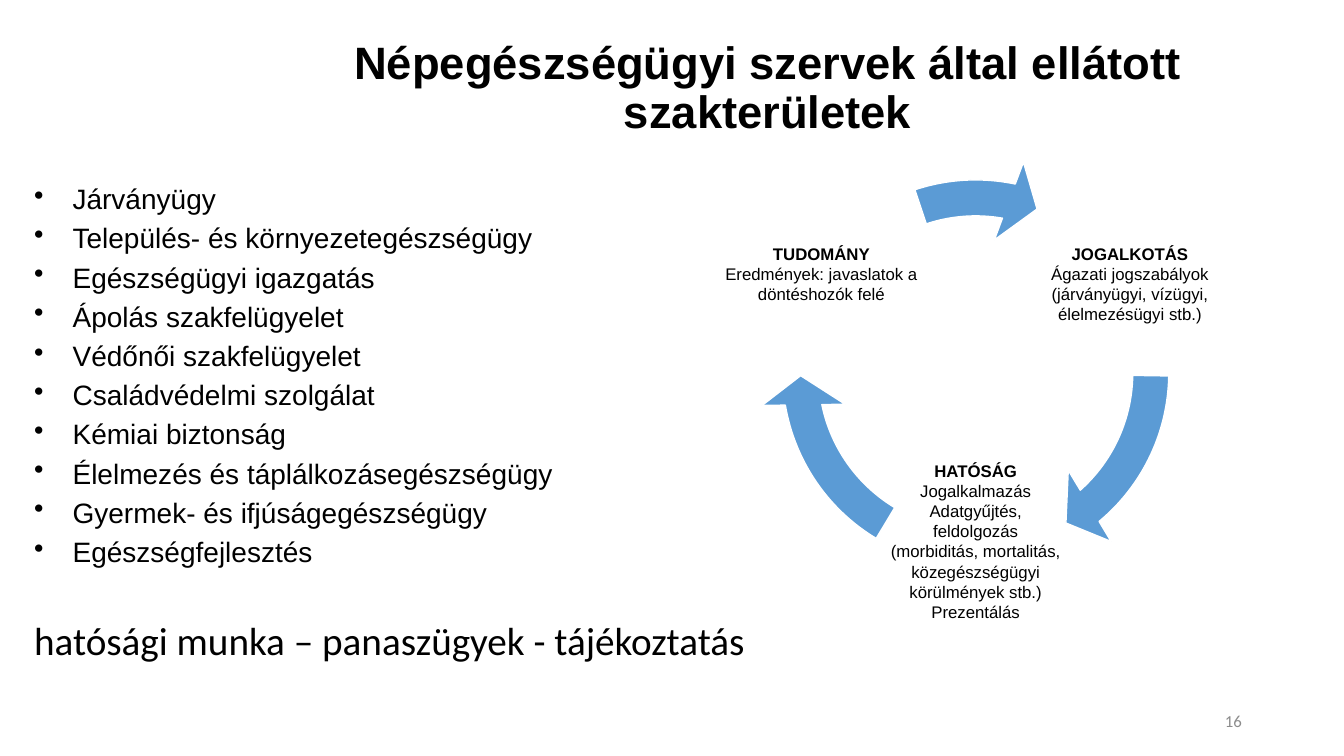
import math

import pptx
import pptx.dml.color
import pptx.enum.shapes
import pptx.enum.text
import pptx.oxml.ns
import pptx.util
from lxml import etree

Cm = pptx.util.Cm
Pt = pptx.util.Pt
ALIGN = pptx.enum.text.PP_ALIGN
ANCHOR = pptx.enum.text.MSO_ANCHOR

BLACK = "000000"
GREY = "8C8C8C"
BLUE = "5B9BD5"
WHITE = "FFFFFF"

FIELDS = [
    "Járványügy",
    "Település- és környezetegészségügy",
    "Egészségügyi igazgatás",
    "Ápolás szakfelügyelet",
    "Védőnői szakfelügyelet",
    "Családvédelmi szolgálat",
    "Kémiai biztonság",
    "Élelmezés és táplálkozásegészségügy",
    "Gyermek- és ifjúságegészségügy",
    "Egészségfejlesztés",
]

# Angle on the ring, width, bottom inset, lines, arrow head and tail adjustments
STAGES = [
    (-30, 4.62, 0.05,
     ["JOGALKOTÁS", "Ágazati jogszabályok", "(járványügyi, vízügyi,",
      "élelmezésügyi stb.)"],
     (29.621, 0.529)),
    (90, 4.62, 0.56,
     ["HATÓSÁG", "Jogalkalmazás", "Adatgyűjtés, feldolgozás",
      "(morbiditás, mortalitás,", "közegészségügyi körülmények stb.)",
      "Prezentálás"],
     (101.706, 72.614)),
    (210, 4.95, 0.56,
     ["TUDOMÁNY", "Eredmények: javaslatok a döntéshozók felé"],
     (168.551, 150.984)),
]


def rgb(value):
    return pptx.dml.color.RGBColor.from_string(value)


def add_frame(slide, left, top, width, height, anchor, insets):
    """Add a wrapping text box (cm); insets are left, top, right, bottom."""
    box = slide.shapes.add_textbox(Cm(left), Cm(top), Cm(width), Cm(height))
    frame = box.text_frame
    frame.word_wrap = True
    frame.vertical_anchor = anchor
    (frame.margin_left, frame.margin_top,
     frame.margin_right, frame.margin_bottom) = map(Cm, insets)
    return frame


def add_line(frame, index, text, size, font="Arial", color=BLACK,
             bold=False, align=ALIGN.LEFT):
    """Write one paragraph with one run; index 0 uses the existing paragraph."""
    paragraph = frame.add_paragraph() if index else frame.paragraphs[0]
    paragraph.alignment = align
    run = paragraph.add_run()
    run.text = text
    run.font.size = Pt(size)
    run.font.name = font
    run.font.bold = bold
    run.font.color.rgb = rgb(color)
    return paragraph


def add_bullet(paragraph, indent):
    properties = paragraph._p.get_or_add_pPr()
    properties.set("marL", str(Cm(indent)))
    properties.set("indent", str(-Cm(indent)))
    bullet = etree.SubElement(properties, pptx.oxml.ns.qn("a:buChar"))
    bullet.set("char", "•")


def draw_title(slide, left, top, width, height):
    frame = add_frame(slide, left, top, width, height, ANCHOR.MIDDLE,
                      (0.25, 1.35, 0.25, 0.1))
    title = add_line(frame, 0, "Népegészségügyi szervek által ellátott szakterületek",
                     32.4, bold=True, align=ALIGN.CENTER)
    title.line_spacing = 0.9


def draw_fields(slide, left, top, width, height):
    frame = add_frame(slide, left, top, width, height, ANCHOR.TOP,
                      (0.25, 1.15, 0.25, 0.13))
    for index, field in enumerate(FIELDS):
        entry = add_line(frame, index, field, 20)
        add_bullet(entry, 0.97)
        if index:
            entry.space_before = Pt(4)
    summary = add_line(frame, len(FIELDS),
                       "hatósági munka – panaszügyek - tájékoztatás",
                       28, font="Calibri")
    summary.line_spacing = 0.9
    summary.space_before = Pt(38)


def draw_cycle(slide, left, top, side):
    """Set the stages on a ring, each followed by an arrow."""
    stage_height = 4.62
    radius = 4.49
    for angle, stage_width, bottom, lines, (head, tail) in STAGES:
        center_x = left + side / 2 + radius * math.cos(math.radians(angle))
        center_y = top + side / 2 + radius * math.sin(math.radians(angle))
        frame = add_frame(slide, center_x - stage_width / 2,
                          center_y - stage_height / 2, stage_width, stage_height,
                          ANCHOR.MIDDLE, (0.05, 0.05, 0.05, bottom))
        for index, line in enumerate(lines):
            add_line(frame, index, line, 12, bold=index == 0, align=ALIGN.CENTER)

        arrow = slide.shapes.add_shape(
            pptx.enum.shapes.MSO_SHAPE.CIRCULAR_ARROW,
            Cm(left), Cm(top), Cm(side), Cm(side))
        for index, value in enumerate((0.083, 5.765, head, tail, 0.096)):
            arrow.adjustments[index] = value
        arrow.shadow.inherit = False
        arrow.fill.solid()
        arrow.fill.fore_color.rgb = rgb(BLUE)
        arrow.line.color.rgb = rgb(WHITE)
        arrow.line.width = Pt(1)


def draw_page_number(slide, left, top, width, height):
    frame = add_frame(slide, left, top, width, height, ANCHOR.MIDDLE,
                      (0.25, 0.13, 0.25, 0.13))
    add_line(frame, 0, "16", 12, font="Calibri", color=GREY, align=ALIGN.RIGHT)


def main():
    presentation = pptx.Presentation()
    presentation.slide_width = Cm(33.87)
    presentation.slide_height = Cm(19.05)
    slide = presentation.slides.add_slide(presentation.slide_layouts[6])
    draw_title(slide, 8.26, 0.08, 22.17, 3.1)
    draw_fields(slide, 0.61, 3.43, 32.23, 13.74)
    draw_page_number(slide, 23.93, 17.65, 7.62, 1.02)
    draw_cycle(slide, 19.13, 3.94, 10.92)
    presentation.save("out.pptx")


if __name__ == "__main__":
    main()
